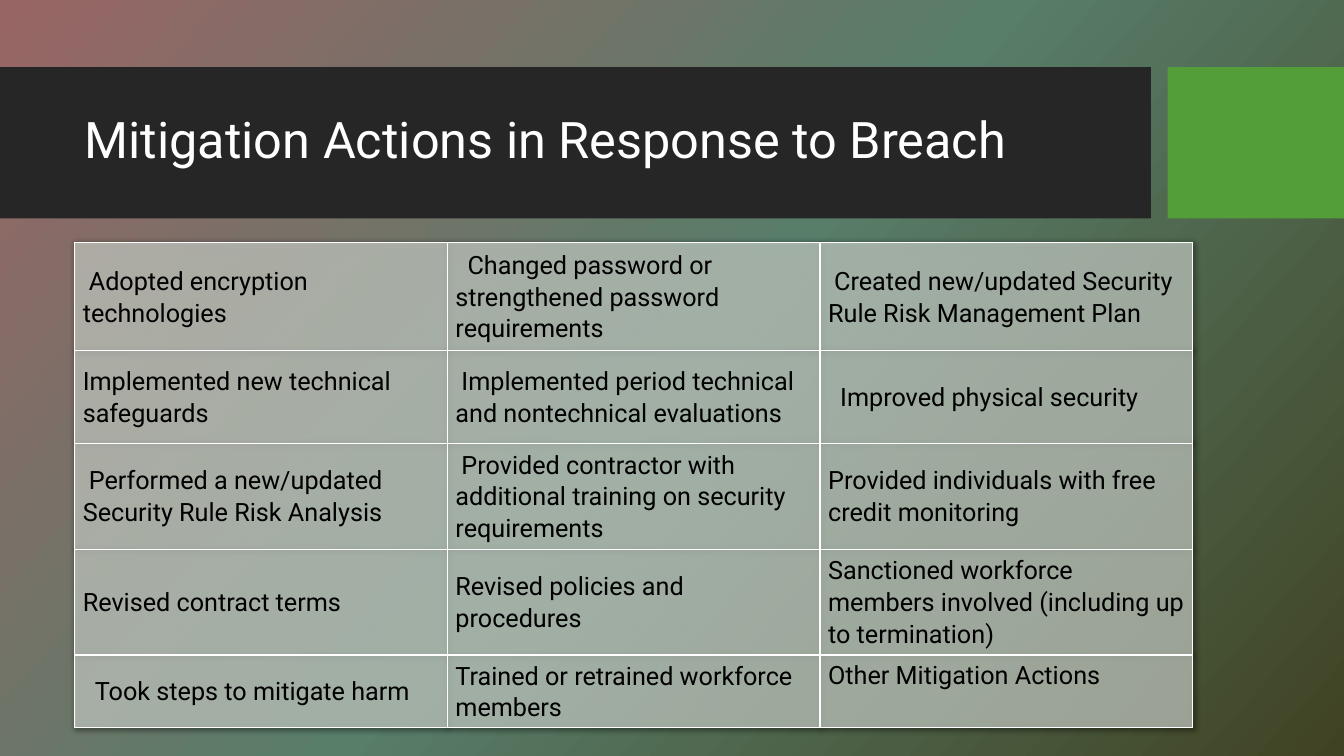
from copy import deepcopy
from dataclasses import dataclass

from lxml.etree import SubElement
from pptx import Presentation
from pptx.dml.color import RGBColor
from pptx.enum.shapes import MSO_SHAPE
from pptx.enum.text import MSO_ANCHOR
from pptx.oxml import parse_xml
from pptx.oxml.ns import nsdecls, qn
from pptx.util import Emu, Inches, Pt

FONT = "Roboto"
WHITE = RGBColor(0xFF, 0xFF, 0xFF)
BLACK = RGBColor(0x00, 0x00, 0x00)
CHARCOAL = RGBColor(0x26, 0x26, 0x26)
GREEN = RGBColor(0x54, 0x9E, 0x39)
MINT = RGBColor(0xE9, 0xF0, 0xE8)
ROSE = RGBColor(0x98, 0x65, 0x65)
SAGE = RGBColor(0x58, 0x7D, 0x69)
OLIVE = RGBColor(0x40, 0x43, 0x23)

# The slide is a grid of 160 by 90 square units
COLS, ROWS = 160, 90
WIDTH, HEIGHT = Inches(13.33), Inches(7.5)


def gx(cols: float) -> Emu:
    return Emu(round(WIDTH * cols / COLS))


def gy(rows: float) -> Emu:
    return Emu(round(HEIGHT * rows / ROWS))


@dataclass(frozen=True)
class Area:
    left: float
    top: float
    width: float
    height: float

    def box(self) -> tuple[Emu, Emu, Emu, Emu]:
        return gx(self.left), gy(self.top), gx(self.width), gy(self.height)


@dataclass(frozen=True)
class Band:
    area: Area
    color: RGBColor


@dataclass(frozen=True)
class Action:
    text: str
    indent: int = 0  # first-line indent steps
    anchor: MSO_ANCHOR = MSO_ANCHOR.MIDDLE


BANDS = [
    Band(Area(0, 8, 137, 18), CHARCOAL),
    Band(Area(139, 8, 21, 18), GREEN),
]
TITLE = Area(8.9, 9.84, 126.1, 14.2)
TABLE = Area(8.9, 28.9, 133.1, 57.8)
ROW_HEIGHTS = [12.84, 11.04, 12.6, 12.6, 8.64]
INDENT = Inches(0.06)

ACTIONS = [
    [Action("Adopted encryption technologies", 1),
     Action("Changed password or strengthened password requirements", 2),
     Action("Created new/updated Security Rule Risk Management Plan", 1)],
    [Action("Implemented new technical safeguards"),
     Action("Implemented period technical and nontechnical evaluations", 1),
     Action("Improved physical security", 2)],
    [Action("Performed a new/updated Security Rule Risk Analysis", 1),
     Action("Provided contractor with additional training on security requirements", 1),
     Action("Provided individuals with free credit monitoring")],
    [Action("Revised contract terms"),
     Action("Revised policies and procedures"),
     Action("Sanctioned workforce members involved (including up to termination)")],
    [Action("Took steps to mitigate harm", 2),
     Action("Trained or retrained workforce members"),
     Action("Other Mitigation Actions", anchor=MSO_ANCHOR.TOP)],
]


def write(tf, text: str, *, size: float, color: RGBColor,
          spacing: float, indent: int = 0) -> None:
    tf.word_wrap = True
    p = tf.paragraphs[0]
    p.line_spacing = spacing
    if indent:
        p._p.get_or_add_pPr().set("indent", str(indent))
    r = p.add_run()
    r.text = text
    r.font.name = FONT
    r.font.size = Pt(size)
    r.font.color.rgb = color


def paint_background(s) -> None:
    fill = s.background.fill
    fill.gradient()
    fill.gradient_angle = 318
    stops = s._element.find(".//" + qn("a:gsLst"))
    stops.append(deepcopy(stops[-1]))
    for stop, color, place in zip(fill.gradient_stops, (ROSE, SAGE, OLIVE), (0, 0.5, 1)):
        stop.color.rgb = color
        stop.position = place


def draw_band(s, band: Band) -> None:
    sp = s.shapes.add_shape(MSO_SHAPE.RECTANGLE, *band.area.box())
    sp.shadow.inherit = False
    sp.fill.solid()
    sp.fill.fore_color.rgb = band.color
    sp.line.fill.background()


def format_cell(cell, action: Action) -> None:
    cell.vertical_anchor = action.anchor
    cell.margin_left = cell.margin_right = Inches(0.08)
    cell.margin_top = cell.margin_bottom = Inches(0.04)
    write(cell.text_frame, action.text, size=18, color=BLACK,
          spacing=1.07, indent=action.indent * INDENT)
    # Translucent fill
    cell.fill.solid()
    cell.fill.fore_color.rgb = MINT
    tcPr = cell._tc.get_or_add_tcPr()
    SubElement(tcPr.find(".//" + qn("a:srgbClr")), qn("a:alpha"), val="59000")
    # White borders
    for i, side in enumerate("LRTB"):
        tcPr.insert(i, parse_xml(
            f'<a:ln{side} {nsdecls("a")} w="{Pt(1)}"><a:solidFill>'
            f'<a:srgbClr val="{WHITE}"/></a:solidFill></a:ln{side}>'))


def draw_table(s) -> None:
    tbl = s.shapes.add_table(len(ACTIONS), len(ACTIONS[0]), *TABLE.box()).table
    tbl.first_row = tbl.horz_banding = False
    tbl._tbl.tblPr.insert(0, parse_xml(
        f'<a:effectLst {nsdecls("a")}><a:outerShdw blurRad="50800" dist="12700" '
        f'dir="2700000" algn="tl" rotWithShape="0"><a:srgbClr val="{BLACK}">'
        '<a:alpha val="55000"/></a:srgbClr></a:outerShdw></a:effectLst>'))
    for column in tbl.columns:
        column.width = gx(TABLE.width / len(ACTIONS[0]))
    for i, (height, actions) in enumerate(zip(ROW_HEIGHTS, ACTIONS)):
        tbl.rows[i].height = gy(height)
        for j, action in enumerate(actions):
            format_cell(tbl.cell(i, j), action)


def main() -> None:
    prs = Presentation()
    prs.slide_width, prs.slide_height = WIDTH, HEIGHT
    s = prs.slides.add_slide(prs.slide_layouts[6])
    paint_background(s)

    # Title bar
    for band in BANDS:
        draw_band(s, band)
    tf = s.shapes.add_textbox(*TITLE.box()).text_frame
    tf.vertical_anchor = MSO_ANCHOR.MIDDLE
    write(tf, "Mitigation Actions in Response to Breach",
          size=36, color=WHITE, spacing=0.9)

    # Actions
    draw_table(s)
    prs.save("out.pptx")


if __name__ == "__main__":
    main()
